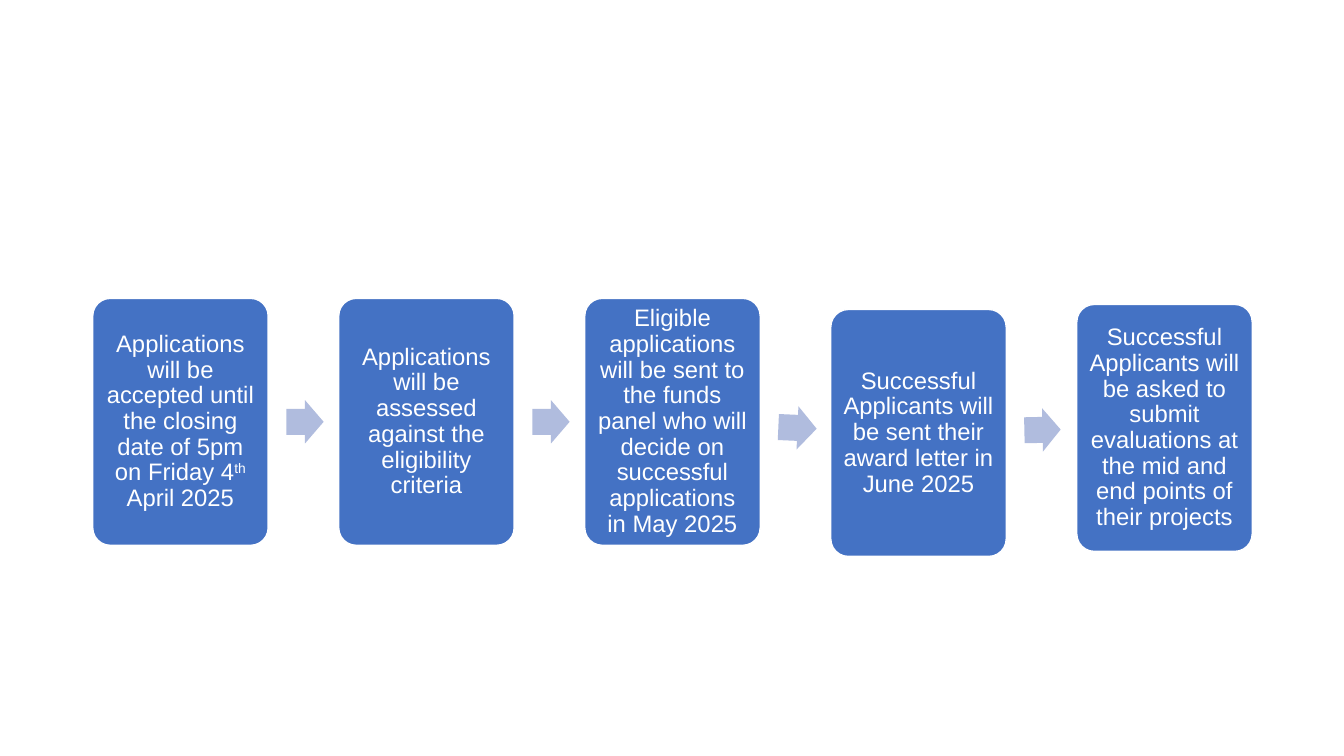
from pptx import Presentation
from pptx.dml.color import RGBColor
from pptx.enum.shapes import MSO_SHAPE
from pptx.enum.text import MSO_ANCHOR, PP_ALIGN
from pptx.util import Inches, Pt

BLUE = RGBColor(0x44, 0x72, 0xC4)
PALE_BLUE = RGBColor(0xB0, 0xBC, 0xDE)
WHITE = RGBColor(0xFF, 0xFF, 0xFF)

FIRST_STEP_LEFT = 0.92
FIRST_ARROW_LEFT = 2.84
STEP_PITCH = 2.44

STEPS = [
    (2.96, ["Applications will be accepted until the closing date of 5pm on Friday 4",
            "th", " April 2025"]),
    (2.96, ["Applications will be assessed against the eligibility criteria"]),
    (2.96, ["Eligible applications will be sent to the funds panel who will decide "
            "on successful applications in May 2025"]),
    (3.07, ["Successful Applicants will be sent their award letter in June 2025"]),
    (3.02, ["Successful Applicants will be asked to submit evaluations at the mid "
            "and end points of their projects"]),
]
ARROWS = [(3.97, 0.37, 0), (3.97, 0.37, 0), (4.03, 0.38, 2.5), (4.05, 0.36, 358.8)]


def add_filled_shape(page, kind, left, top, width, height, color):
    shape = page.shapes.add_shape(
        kind, Inches(left), Inches(top), Inches(width), Inches(height))
    shape.shadow.inherit = False
    shape.fill.solid()
    shape.fill.fore_color.rgb = color
    return shape


def write_text(box, parts, size=17, color=WHITE, superscript="th"):
    frame = box.text_frame
    frame.word_wrap = True
    frame.vertical_anchor = MSO_ANCHOR.MIDDLE
    frame.margin_left = frame.margin_right = Inches(0.07)
    frame.margin_top = frame.margin_bottom = Inches(0.07)
    para = frame.paragraphs[0]
    para.alignment = PP_ALIGN.CENTER
    para.line_spacing = 0.9
    for part in parts:
        span = para.add_run()
        span.text = part
        span.font.name = "Arial"
        span.font.size = Pt(size)
        span.font.color.rgb = color
        if part == superscript:
            span._r.get_or_add_rPr().set("baseline", "30000")


def add_step(page, left, top, parts):
    box = add_filled_shape(
        page, MSO_SHAPE.ROUNDED_RECTANGLE, left, top, 1.74, 2.45, BLUE)
    box.adjustments[0] = 0.1
    box.line.color.rgb = WHITE
    box.line.width = Pt(1)
    write_text(box, parts)


def add_arrow(page, left, top, width, rotation):
    arrow = add_filled_shape(
        page, MSO_SHAPE.RIGHT_ARROW, left, top, width, 0.43, PALE_BLUE)
    arrow.adjustments[0] = 0.6
    arrow.adjustments[1] = 0.5
    arrow.line.fill.background()
    arrow.rotation = rotation


def main():
    deck = Presentation()
    deck.slide_width = Inches(13.33)
    deck.slide_height = Inches(7.5)
    page = deck.slides.add_slide(deck.slide_layouts[6])
    for index, (top, parts) in enumerate(STEPS):
        add_step(page, FIRST_STEP_LEFT + index * STEP_PITCH, top, parts)
    for index, (top, width, rotation) in enumerate(ARROWS):
        add_arrow(page, FIRST_ARROW_LEFT + index * STEP_PITCH, top, width, rotation)
    deck.save("out.pptx")


if __name__ == "__main__":
    main()
